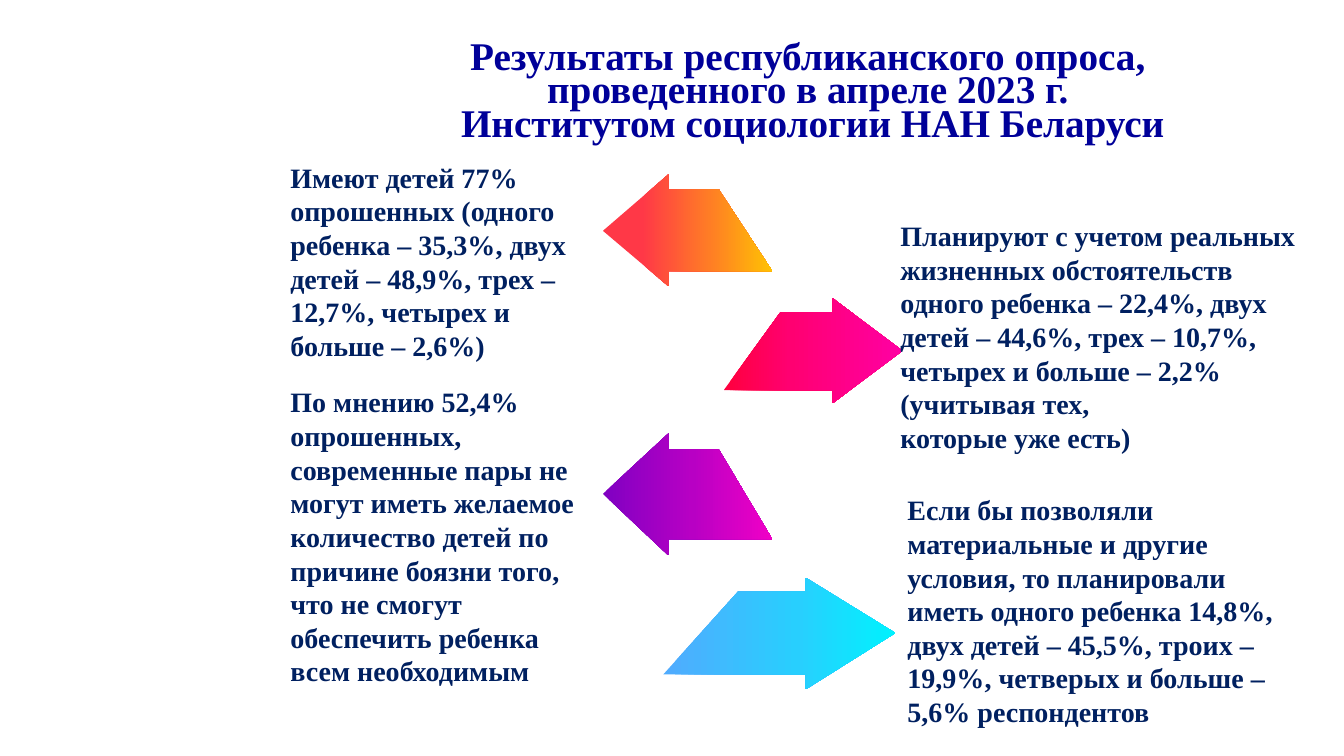
from copy import deepcopy

from pptx import Presentation
from pptx import util as u
from pptx.dml.color import RGBColor
from pptx.enum import text as t
from pptx.oxml import ns

NAVY = RGBColor(0x00, 0x20, 0x60)
BLUE = RGBColor(0x00, 0x00, 0x99)

# Gradient stops, from left to right
FIRE = [(0.23, RGBColor(0xFF, 0x38, 0x47)),
        (0.63, RGBColor(0xFF, 0x7D, 0x25)),
        (1, RGBColor(0xFF, 0xC2, 0x03))]
ROSE = [(0.02, RGBColor(0xFF, 0x00, 0x40)),
        (0.37, RGBColor(0xFF, 0x00, 0x71)),
        (0.99, RGBColor(0xFF, 0x00, 0xA2))]
PLUM = [(0, RGBColor(0x80, 0x00, 0xC2)),
        (0.53, RGBColor(0xB8, 0x00, 0xC4)),
        (1, RGBColor(0xF0, 0x00, 0xC6))]
AQUA = [(0.02, RGBColor(0x4F, 0xAC, 0xFE)),
        (0.58, RGBColor(0x28, 0xCF, 0xFE)),
        (1, RGBColor(0x00, 0xF2, 0xFE))]


def write(frame, words, size=20, color=NAVY, align=t.PP_ALIGN.LEFT,
          lead=None, side=0.05):
    """Fill a text frame with one formatted paragraph."""
    frame.word_wrap = True
    frame.auto_size = t.MSO_AUTO_SIZE.NONE
    frame.vertical_anchor = t.MSO_ANCHOR.TOP
    frame.margin_left = frame.margin_right = u.Inches(side)
    frame.margin_top = frame.margin_bottom = u.Inches(0.05)
    para = frame.paragraphs[0]
    para.text = words
    para.alignment = align
    para.space_before = u.Pt(0)
    if lead:
        para.line_spacing = u.Pt(lead)
    for run in para.runs:
        font = run.font
        font.name = "Times New Roman"
        font.size = u.Pt(size)
        font.bold = True
        font.color.rgb = color


class Page:
    def __init__(self, deck):
        self.slide = deck.slides.add_slide(deck.slide_layouts[5])

    def title(self, words, *box):
        head = self.slide.shapes.title
        head.left, head.top, head.width, head.height = map(u.Inches, box)
        write(head.text_frame, words, size=28, color=BLUE,
              align=t.PP_ALIGN.CENTER, lead=24, side=0.1)

    def note(self, words, *box):
        area = self.slide.shapes.add_textbox(*map(u.Inches, box))
        write(area.text_frame, words)

    def arrow(self, tip, neck, near, far, rows, stops):
        """Arrow with a slanted tail; rows: top, high, mid, low, bottom."""
        top, high, mid, low, end = rows
        dots = [(neck, top), (tip, mid), (neck, end), (neck, low),
                (far, low), (near, high), (neck, high)]
        dots = [(u.Inches(x), u.Inches(y)) for x, y in dots]
        pen = self.slide.shapes.build_freeform(*dots[0])
        pen.add_line_segments(dots[1:], close=True)
        shape = pen.convert_to_shape()
        shape.shadow.inherit = False
        shape.line.fill.background()
        fill = shape.fill
        fill.gradient()
        fill.gradient_angle = 0
        # A new gradient has two stops: add the third
        group = shape._element.spPr.find(".//" + ns.qn("a:gsLst"))
        group.append(deepcopy(group[0]))
        for stop, (place, color) in zip(fill.gradient_stops, stops):
            stop.position = place
            stop.color.rgb = color


def main():
    deck = Presentation()
    deck.slide_width = u.Inches(13.33)
    deck.slide_height = u.Inches(7.5)
    page = Page(deck)

    # Heading
    page.title("Результаты республиканского опроса, \n"
               "проведенного в апреле 2023 г. \n"
               "Институтом социологии НАН Беларуси", 2.81, 0.39, 10.5, 1.12)

    # Arrows, from top to bottom
    page.arrow(5.98, 6.63, 7.13, 7.66, (1.73, 1.88, 2.29, 2.69, 2.84), FIRE)
    page.arrow(8.95, 8.26, 7.74, 7.18, (2.96, 3.1, 3.48, 3.87, 4), ROSE)
    page.arrow(5.98, 6.63, 7.13, 7.66, (4.3, 4.46, 4.9, 5.35, 5.51), PLUM)
    page.arrow(8.88, 7.99, 7.32, 6.58, (5.73, 5.87, 6.28, 6.69, 6.84), AQUA)

    # Left column
    page.note("Имеют детей 77% опрошенных (одного ребенка – 35,3%, двух детей "
              "– 48,9%, трех – 12,7%, четырех и больше – 2,6%)",
              2.83, 1.54, 3.24, 2.12)
    page.note("По мнению 52,4% опрошенных, современные пары не могут иметь "
              "желаемое количество детей по причине боязни того, что не "
              "смогут обеспечить ребенка \nвсем необходимым",
              2.83, 3.77, 3.15, 3.13)

    # Right column
    page.note("Планируют с учетом реальных жизненных обстоятельств одного "
              "ребенка – 22,4%, двух детей – 44,6%, трех – 10,7%, четырех и "
              "больше – 2,2% (учитывая тех, \nкоторые уже есть)",
              8.88, 2.12, 4.26, 2.46)
    page.note("Если бы позволяли материальные и другие условия, то "
              "планировали иметь одного ребенка 14,8%, двух детей – 45,5%, "
              "троих – 19,9%, четверых и больше – 5,6% респондентов",
              8.95, 4.84, 4.06, 2.46)

    deck.save("out.pptx")


if __name__ == "__main__":
    main()
